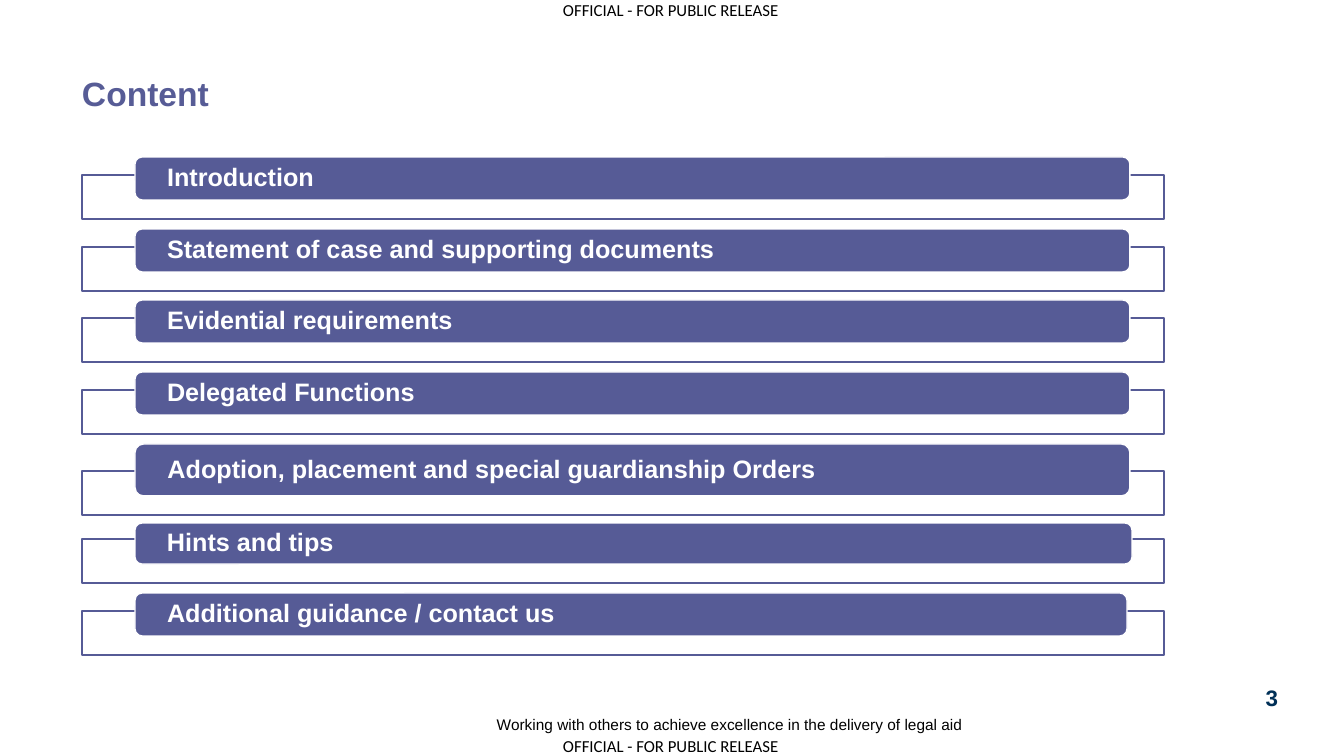
import pptx
import pptx.util
import pptx.dml.color
import pptx.enum.shapes
import pptx.enum.text

TITLE = "Content"
MARKING = "OFFICIAL - FOR PUBLIC RELEASE"
MOTTO = "Working with others to achieve excellence in the delivery of legal aid"
PAGE_NUMBER = "3"
TOPICS = [
    ("Introduction", 157, 43, 995),
    ("Statement of case and supporting documents", 229, 43, 995),
    ("Evidential requirements", 300, 43, 995),
    ("Delegated Functions", 372, 43, 995),
    ("Adoption, placement and special guardianship Orders", 444, 52, 995),
    ("Hints and tips", 523, 41, 997),
    ("Additional guidance / contact us", 593, 43, 992),
]
COLORS = {"title": "575C96", "bar": "565B96", "white": "FFFFFF",
          "black": "000000", "number": "003057"}
FRAME_LEFT, FRAME_WIDTH, FRAME_HEIGHT, FRAME_OVERLAP = 82, 1082, 44, 25
BAR_LEFT, BAR_INSET = 135, 30

SHAPE = pptx.enum.shapes.MSO_SHAPE
ANCHOR = pptx.enum.text.MSO_ANCHOR
ALIGN = pptx.enum.text.PP_ALIGN


def px(length):
    return pptx.util.Emu(round(length * 914400 / 100.8))


def color(name):
    return pptx.dml.color.RGBColor.from_string(COLORS[name])


def write(box, text, size, fill, font="Arial", bold=False, align=ALIGN.LEFT,
          anchor=ANCHOR.TOP, inset=0, spacing=None, wrap=True):
    frame = box.text_frame
    frame.auto_size = pptx.enum.text.MSO_AUTO_SIZE.NONE
    frame.word_wrap = wrap
    frame.vertical_anchor = anchor
    frame.margin_left = frame.margin_right = px(inset)
    frame.margin_top = frame.margin_bottom = 0
    para = frame.paragraphs[0]
    para.alignment = align
    if spacing:
        para.line_spacing = spacing
    span = para.add_run()
    span.text = text
    span.font.name = font
    span.font.size = pptx.util.Pt(size)
    span.font.bold = bold
    span.font.color.rgb = color(fill)


def add_panel(page, kind, area, fill, line):
    panel = page.shapes.add_shape(kind, *map(px, area))
    panel.shadow.inherit = False
    panel.fill.solid()
    panel.fill.fore_color.rgb = color(fill)
    panel.line.color.rgb = color(line)
    panel.line.width = pptx.util.Pt(1)
    return panel


def add_label(page, area, text, **style):
    write(page.shapes.add_textbox(*map(px, area)), text, **style)


def main():
    deck = pptx.Presentation()
    deck.slide_width, deck.slide_height = px(1344), px(756)
    page = deck.slides.add_slide(deck.slide_layouts[5])

    title = page.shapes.title
    title.left, title.top, title.width, title.height = map(px, (82, 77, 851, 38))
    write(title, TITLE, size=24, fill="title", bold=True, spacing=0.9)

    for top in (0, 736):
        add_label(page, (563, top, 220, 20), MARKING, size=12, fill="black",
                  font="Calibri", wrap=False)
    add_label(page, (212, 698, 751, 36), MOTTO, size=11, fill="black",
              align=ALIGN.RIGHT, anchor=ANCHOR.BOTTOM)
    add_label(page, (1257, 684, 30, 28), PAGE_NUMBER, size=16, fill="number",
              bold=True, align=ALIGN.CENTER)

    for topic, top, height, width in TOPICS:
        frame_top = top + height - FRAME_OVERLAP
        add_panel(page, SHAPE.RECTANGLE,
                  (FRAME_LEFT, frame_top, FRAME_WIDTH, FRAME_HEIGHT), "white", "bar")
        bar = add_panel(page, SHAPE.ROUNDED_RECTANGLE,
                        (BAR_LEFT, top, width, height), "bar", "white")
        write(bar, topic, size=18, fill="white", bold=True, anchor=ANCHOR.MIDDLE,
              inset=BAR_INSET, spacing=0.9)

    deck.save("out.pptx")


if __name__ == "__main__":
    main()
